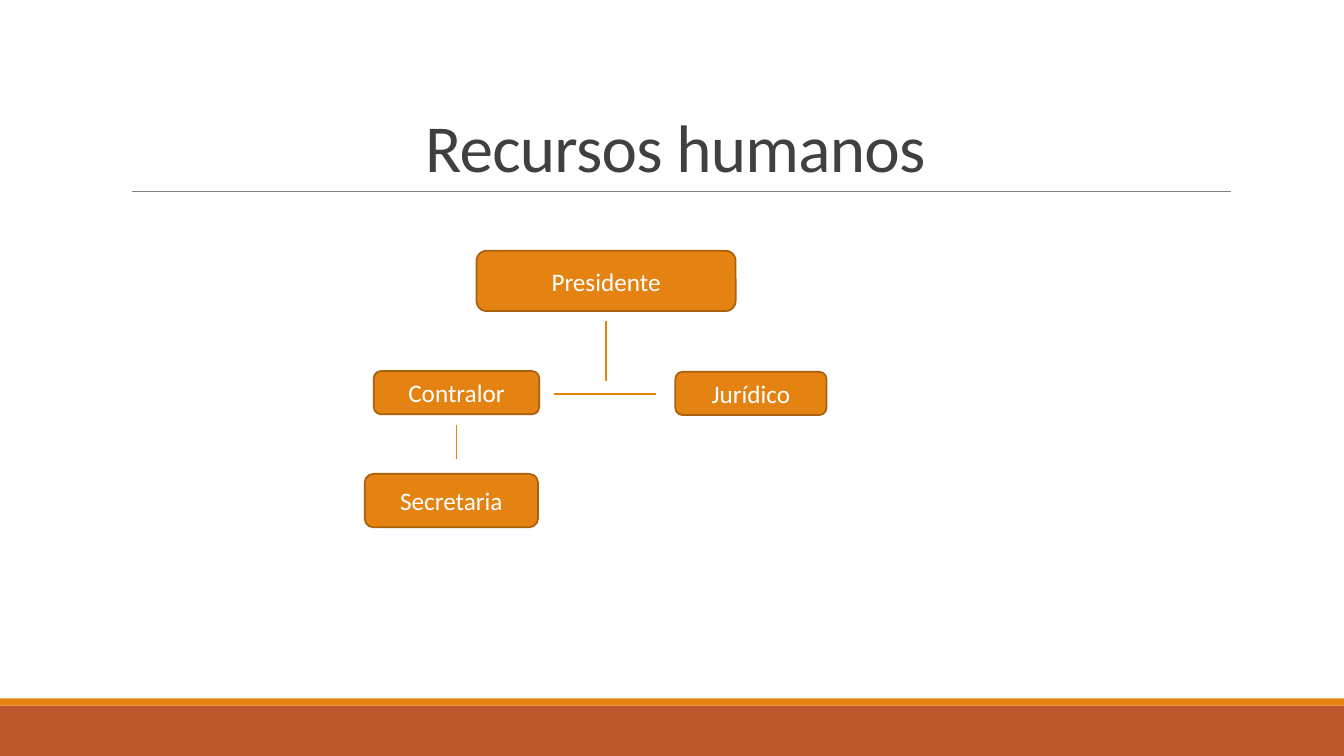
import dataclasses

import lxml.etree
import pptx
import pptx.dml.color
import pptx.enum.shapes
import pptx.enum.text
import pptx.oxml.ns
import pptx.util

Cm = pptx.util.Cm
Pt = pptx.util.Pt
ShapeKind = pptx.enum.shapes.MSO_SHAPE
Anchor = pptx.enum.text.MSO_ANCHOR
WIDTH, HEIGHT = 33.87, 19.05


@dataclasses.dataclass(frozen=True)
class Theme:
    font: str = "Calibri"
    title_size: float = 48
    box_size: float = 18
    title_color: str = "404040"
    box_text: str = "FFFFFF"
    accent: str = "E48312"
    accent_edge: str = "A9610D"
    footer: str = "BD582C"
    rule: str = "808080"


def rgb(color):
    return pptx.dml.color.RGBColor.from_string(color)


def set_attributes(target, values):
    for name, value in values.items():
        setattr(target, name, value)


class ChartSlide:
    """Draws the elements of an organisation chart on one slide; lengths in cm."""

    def __init__(self, presentation, theme):
        self.theme = theme
        self.slide = presentation.slides.add_slide(presentation.slide_layouts[5])

    def fill_text(self, frame, text, size, color, anchor):
        set_attributes(frame, {
            "text": text,
            "word_wrap": True,
            "auto_size": pptx.enum.text.MSO_AUTO_SIZE.NONE,
            "vertical_anchor": anchor,
        })
        paragraph = frame.paragraphs[0]
        paragraph.alignment = pptx.enum.text.PP_ALIGN.CENTER
        font = paragraph.runs[0].font
        set_attributes(font, {"name": self.theme.font, "size": Pt(size)})
        font.color.rgb = rgb(color)
        return paragraph

    def title(self, text, left, top, width, height):
        title = self.slide.shapes.title
        set_attributes(title, {
            "left": Cm(left), "top": Cm(top),
            "width": Cm(width), "height": Cm(height),
        })
        paragraph = self.fill_text(title.text_frame, text, self.theme.title_size,
                                   self.theme.title_color, Anchor.BOTTOM)
        paragraph.line_spacing = 0.85
        paragraph.runs[0].font._element.set("spc", "-50")

    def block(self, kind, color, left, top, width, height):
        shape = self.slide.shapes.add_shape(
            kind, Cm(left), Cm(top), Cm(width), Cm(height))
        shape.shadow.inherit = False
        shape.fill.solid()
        shape.fill.fore_color.rgb = rgb(color)
        shape.line.fill.background()
        return shape

    def band(self, color, top, height):
        self.block(ShapeKind.RECTANGLE, color, 0, top, WIDTH, height)

    def role(self, text, left, top, width, height):
        shape = self.block(ShapeKind.ROUNDED_RECTANGLE, self.theme.accent,
                           left, top, width, height)
        shape.line.color.rgb = rgb(self.theme.accent_edge)
        shape.line.width = Pt(1.25)
        self.fill_text(shape.text_frame, text, self.theme.box_size,
                       self.theme.box_text, Anchor.MIDDLE)

    def line(self, color, weight, *ends):
        connector = self.slide.shapes.add_connector(
            pptx.enum.shapes.MSO_CONNECTOR.STRAIGHT, *map(Cm, ends))
        connector.line.color.rgb = rgb(color)
        connector.line.width = Pt(weight)
        lxml.etree.SubElement(connector._element.spPr,
                              pptx.oxml.ns.qn("a:effectLst"))


def main():
    presentation = pptx.Presentation()
    set_attributes(presentation, {
        "slide_width": Cm(WIDTH), "slide_height": Cm(HEIGHT)})
    theme = Theme()
    chart = ChartSlide(presentation, theme)

    chart.band(theme.footer, 17.78, 1.27)
    chart.band(theme.accent, 17.6, 0.18)
    chart.line(theme.rule, 0.5, 3.33, 4.83, 31.01, 4.83)
    chart.title("Recursos humanos", 3.05, 0.79, 27.94, 4.04)

    roles = [
        ("Presidente", 12.01, 6.32, 6.53, 1.52),
        ("Contralor", 9.42, 9.35, 4.17, 1.09),
        ("Secretaria", 9.19, 11.94, 4.37, 1.35),
        ("Jurídico", 17.02, 9.37, 3.81, 1.09),
    ]
    for role in roles:
        chart.role(*role)

    links = [
        (15.27, 8.08, 15.27, 9.6),
        (11.51, 10.72, 11.51, 11.56),
        (13.97, 9.93, 16.54, 9.93),
    ]
    for ends in links:
        chart.line(theme.accent, 1, *ends)

    presentation.save("out.pptx")


if __name__ == "__main__":
    main()
